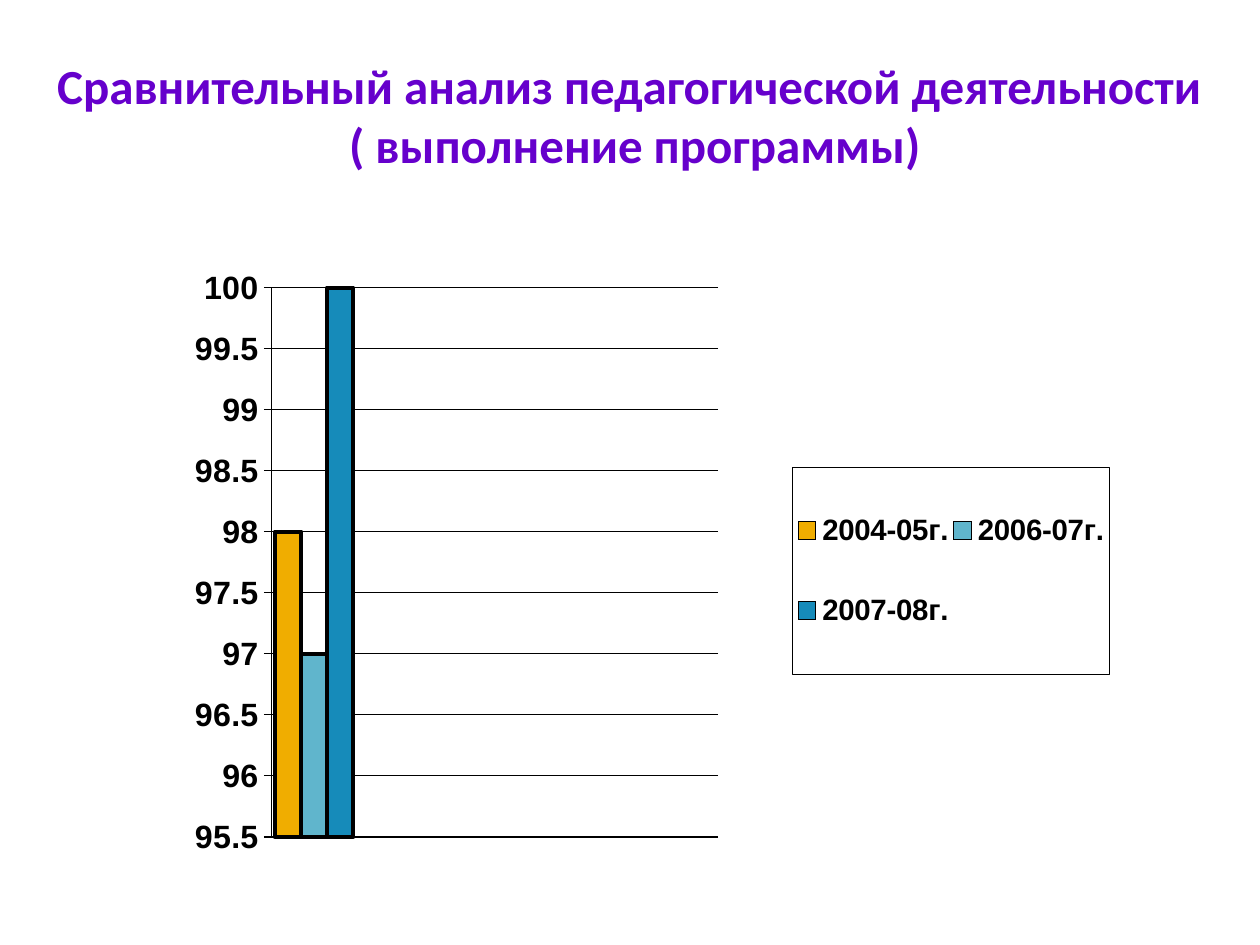
from lxml import etree
from pptx import Presentation
from pptx.chart.data import CategoryChartData
from pptx.dml.color import RGBColor
from pptx.enum.chart import XL_CHART_TYPE, XL_LEGEND_POSITION, XL_TICK_MARK
from pptx.enum.text import MSO_ANCHOR, MSO_AUTO_SIZE, PP_ALIGN
from pptx.oxml import parse_xml
from pptx.oxml.ns import nsdecls, qn
from pptx.util import Emu, Pt

COLUMN = XL_CHART_TYPE.COLUMN_CLUSTERED
RIGHT = XL_LEGEND_POSITION.RIGHT
CROSS, NO_TICK = XL_TICK_MARK.CROSS, XL_TICK_MARK.NONE
CENTER, MIDDLE, NO_FIT = PP_ALIGN.CENTER, MSO_ANCHOR.MIDDLE, MSO_AUTO_SIZE.NONE
TITLE_ONLY = 5

SERIES = [
    ("2004-05г.", 98, "F0AD00"),
    ("2006-07г.", 97, "60B5CC"),
    ("2007-08г.", 100, "168BBA"),
    ("Series 4", None, "680000"),
]


def px(n):
    return Emu(round(n * 914400 / 126))


def rgb(value):
    return RGBColor.from_string(value)


def set_font(font, name, size, color):
    font.name = name
    font.size = Pt(size)
    font.bold = True
    font.color.rgb = rgb(color)


def set_line(line, width):
    line.color.rgb = rgb("000000")
    line.width = Pt(width)


def make_layout(x, y, w, h, inner=False):
    layout = etree.Element(qn("c:layout"))
    manual = etree.SubElement(layout, qn("c:manualLayout"))
    items = [("layoutTarget", "inner")] if inner else []
    items += [("xMode", "edge"), ("yMode", "edge"), ("x", x), ("y", y), ("w", w), ("h", h)]
    for tag, val in items:
        etree.SubElement(manual, qn("c:" + tag)).set("val", str(val))
    return layout


def drop_layout(parent):
    for old in parent.findall(qn("c:layout")):
        parent.remove(old)


def add_title(slide, x, y, w, h):
    sp = slide.shapes.title
    sp.left, sp.top, sp.width, sp.height = px(x), px(y), px(w), px(h)
    tf = sp.text_frame
    tf.word_wrap = True
    tf.auto_size = NO_FIT
    tf.vertical_anchor = MIDDLE
    tf.text = "Сравнительный анализ педагогической деятельности \n( выполнение программы)"
    for p in tf.paragraphs:
        p.alignment = CENTER
        for r in p.runs:
            set_font(r.font, "Calibri", 28, "6600CC")


def format_legend(chart):
    chart.has_legend = True
    legend = chart.legend
    legend.position = RIGHT
    legend.include_in_layout = False
    set_font(legend.font, "Arial", 16.8, "000000")
    el = chart._chartSpace.find(".//" + qn("c:legend"))
    drop_layout(el)
    entry = parse_xml(
        f'<c:legendEntry {nsdecls("c")}><c:idx val="3"/><c:delete val="1"/></c:legendEntry>'
    )
    border = parse_xml(
        f'<c:spPr {nsdecls("c", "a")}><a:noFill/><a:ln w="8382"><a:solidFill>'
        '<a:srgbClr val="000000"/></a:solidFill></a:ln></c:spPr>'
    )
    pos = el.find(qn("c:legendPos"))
    pos.addnext(entry)
    entry.addnext(make_layout(0.66, 0.35, 0.33, 0.31))
    el.find(qn("c:txPr")).addprevious(border)


def add_column_chart(slide, x, y, w, h):
    data = CategoryChartData()
    data.categories = ["1", "2", "3", "4"]
    for name, value, _ in SERIES:
        data.add_series(name, [value, None, None, None])
    chart = slide.shapes.add_chart(COLUMN, px(x), px(y), px(w), px(h), data).chart
    chart.has_title = False
    set_font(chart.font, "Arial", 18.4, "000000")

    plot = chart.plots[0]
    plot.gap_width = 30
    plot.overlap = 0
    plot.vary_by_categories = False
    for series, (_, _, color) in zip(plot.series, SERIES):
        series.invert_if_negative = False
        series.format.fill.solid()
        series.format.fill.fore_color.rgb = rgb(color)
        set_line(series.format.line, 2.63)

    chart.category_axis.visible = False
    axis = chart.value_axis
    axis.minimum_scale, axis.maximum_scale, axis.major_unit = 95.5, 100, 0.5
    axis.major_tick_mark, axis.minor_tick_mark = CROSS, NO_TICK
    axis.has_major_gridlines = True
    set_line(axis.major_gridlines.format.line, 0.66)
    set_line(axis.format.line, 0.66)
    set_font(axis.tick_labels.font, "Arial", 18.4, "000000")

    area = chart._chartSpace.find(".//" + qn("c:plotArea"))
    drop_layout(area)
    area.insert(0, make_layout(0.116, 0.082, 0.466, 0.821, inner=True))
    format_legend(chart)


def main():
    prs = Presentation()
    prs.slide_width, prs.slide_height = px(1260), px(945)
    slide = prs.slides.add_slide(prs.slide_layouts[TITLE_ONLY])
    add_title(slide, 29, 49, 1211, 131)
    add_column_chart(slide, 160, 233, 959, 669)
    prs.save("out.pptx")


if __name__ == "__main__":
    main()
